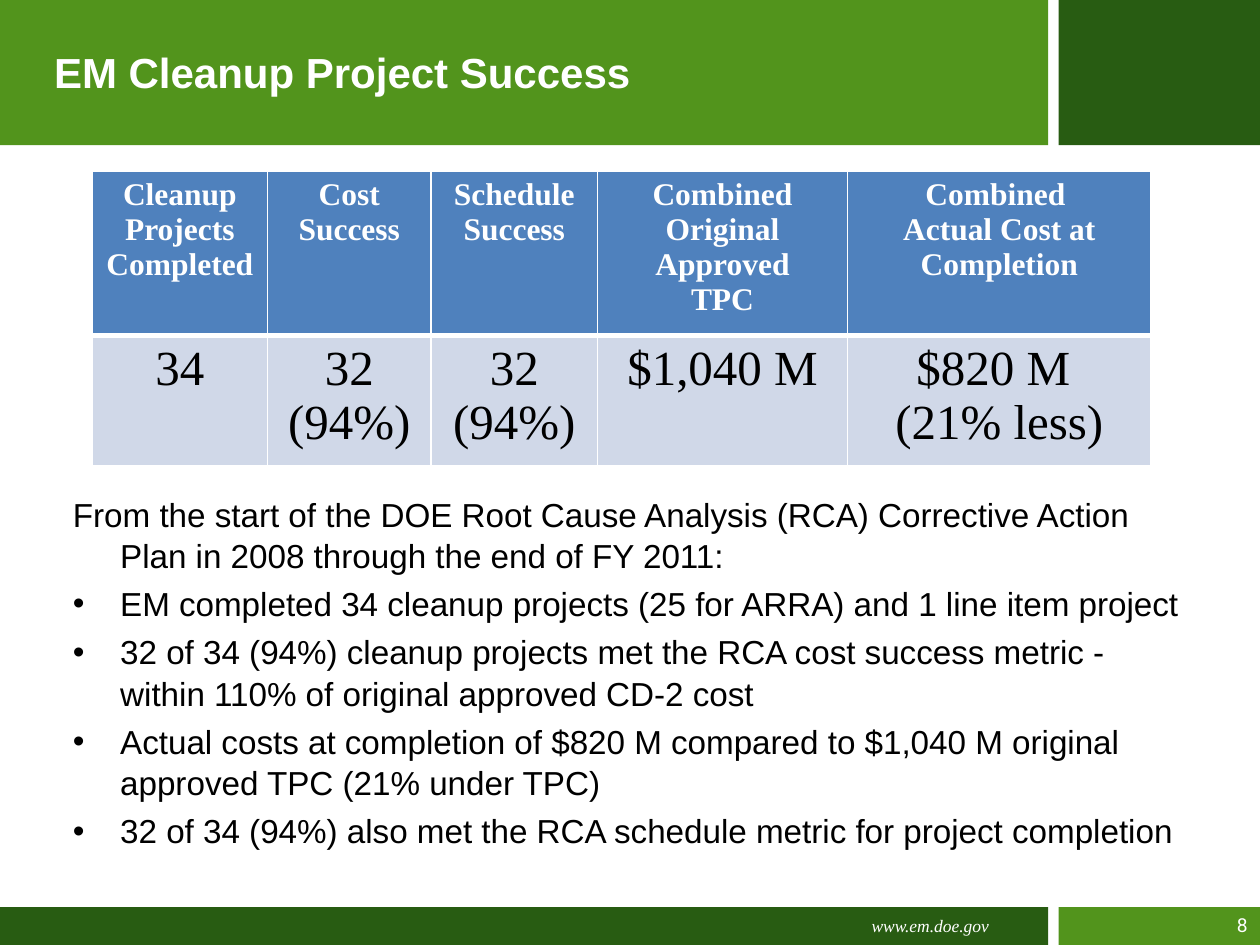
from lxml import etree
from pptx import Presentation
from pptx import util as u
from pptx.dml.color import RGBColor
from pptx.enum import shapes, text
from pptx.oxml import ns

Pt = u.Pt
LEFT, CENTER, RIGHT = text.PP_ALIGN.LEFT, text.PP_ALIGN.CENTER, text.PP_ALIGN.RIGHT

# Content
TITLE = "EM Cleanup Project Success"
WEB_ADDRESS = "www.em.doe.gov"
PAGE_NUMBER = "8"
HEADINGS = [
    ["Cleanup Projects", "Completed"],
    ["Cost Success"],
    ["Schedule Success"],
    ["Combined", "Original Approved", "TPC"],
    ["Combined ", "Actual Cost at Completion"],
]
RESULTS = [["34"], ["32 (94%)"], ["32 (94%)"], ["$1,040 M"], ["$820 M ", "(21% less)"]]
INTRO = ("From the start of the DOE Root Cause Analysis (RCA) Corrective Action "
         "Plan in 2008 through the end of FY 2011:")
BULLETS = [
    "EM completed 34 cleanup projects (25 for ARRA) and 1 line item project",
    "32 of 34 (94%) cleanup projects met the RCA cost success metric - "
    "within 110% of original approved CD-2 cost",
    "Actual costs at completion of $820 M compared to $1,040 M original "
    "approved TPC (21% under TPC)",
    "32 of 34 (94%) also met the RCA schedule metric for project completion",
]

THEME = {
    "light_green": "52941C", "dark_green": "285C12",
    "header_blue": "4F81BD", "row_blue": "D0D8E8",
    "white": "FFFFFF", "black": "000000",
    "sans": "Arial", "serif": "Times New Roman", "number": "Roboto",
    "title": 24, "heading": 18, "result": 28, "body": 19, "web": 10, "page": 11,
}

# Layout
WIDTH, HEIGHT = 720, 540
BAND_HEIGHT, FOOTER_HEIGHT = 83, 21.6
MAIN_WIDTH, SIDE_LEFT = 599, 605
TABLE_LEFT, TABLE_TOP = 52.8, 97.9
COLUMN_WIDTHS = [100, 93.6, 95, 143, 173.4]
ROW_HEIGHTS = [87, 68]
INDENT = 27


def color(name):
    return RGBColor.from_string(THEME[name])


def write(frame, lines, *, size, font, ink="white", bold=False, italic=False,
          align=LEFT, bullets=(), hanging=0, gap=0, spacing=None):
    """Fill a text frame; bullets holds the indexes of bulleted lines."""
    for index, line in enumerate(lines):
        paragraph = frame.paragraphs[0] if index == 0 else frame.add_paragraph()
        paragraph.alignment = align
        if index and gap:
            paragraph.space_before = Pt(gap)
        if spacing:
            paragraph.line_spacing = spacing
        properties = paragraph._p.get_or_add_pPr()
        if hanging:
            properties.set("marL", str(Pt(hanging)))
            properties.set("indent", str(-Pt(hanging)))
        if index in bullets:
            etree.SubElement(properties, ns.qn("a:buFont")).set("typeface", THEME["sans"])
            etree.SubElement(properties, ns.qn("a:buChar")).set("char", "•")
        run = paragraph.add_run()
        run.text = line
        run.font.size = Pt(THEME[size])
        run.font.name = THEME[font]
        run.font.color.rgb = color(ink)
        run.font.bold, run.font.italic = bold, italic


def add_text(slide, box, lines, anchor=text.MSO_ANCHOR.TOP, **style):
    frame = slide.shapes.add_textbox(*map(Pt, box)).text_frame
    frame.word_wrap = True
    frame.vertical_anchor = anchor
    write(frame, lines, **style)


def add_band(slide, left, top, width, height, fill):
    shape = slide.shapes.add_shape(
        shapes.MSO_SHAPE.RECTANGLE, Pt(left), Pt(top), Pt(width), Pt(height))
    shape.shadow.inherit = False
    shape.fill.solid()
    shape.fill.fore_color.rgb = color(fill)
    shape.line.fill.background()


def set_borders(cell, **widths):
    """Draw white borders; lines must come before the fill in the cell."""
    properties = cell._tc.get_or_add_tcPr()
    for position, side in enumerate(("L", "R", "T", "B")):
        line = etree.Element(ns.qn(f"a:ln{side}"), w=str(Pt(widths.get(side, 1))))
        fill = etree.SubElement(line, ns.qn("a:solidFill"))
        etree.SubElement(fill, ns.qn("a:srgbClr")).set("val", THEME["white"])
        properties.insert(position, line)


def add_results_table(slide):
    table = slide.shapes.add_table(
        2, len(COLUMN_WIDTHS), Pt(TABLE_LEFT), Pt(TABLE_TOP),
        Pt(sum(COLUMN_WIDTHS)), Pt(sum(ROW_HEIGHTS))).table
    for column, width in zip(table.columns, COLUMN_WIDTHS):
        column.width = Pt(width)
    rows = [
        (HEADINGS, "header_blue", {"B": 3}, dict(size="heading", bold=True)),
        (RESULTS, "row_blue", {"T": 3}, dict(size="result", ink="black")),
    ]
    for row, (entries, fill, borders, style) in enumerate(rows):
        table.rows[row].height = Pt(ROW_HEIGHTS[row])
        for column, lines in enumerate(entries):
            cell = table.cell(row, column)
            cell.fill.solid()
            cell.fill.fore_color.rgb = color(fill)
            set_borders(cell, **borders)
            write(cell.text_frame, lines, font="serif", align=CENTER, **style)


def main():
    presentation = Presentation()
    presentation.slide_width, presentation.slide_height = Pt(WIDTH), Pt(HEIGHT)
    slide = presentation.slides.add_slide(presentation.slide_layouts[6])

    # Header and footer bands, with the greens swapped between them
    for top, height, main_fill, side_fill in (
            (0, BAND_HEIGHT, "light_green", "dark_green"),
            (HEIGHT - FOOTER_HEIGHT, FOOTER_HEIGHT, "dark_green", "light_green")):
        add_band(slide, 0, top, MAIN_WIDTH, height, main_fill)
        add_band(slide, SIDE_LEFT, top, WIDTH - SIDE_LEFT, height, side_fill)

    # Footer text
    add_text(slide, (491, 519.3, 108, 18.7), [WEB_ADDRESS],
             size="web", font="serif", italic=True)
    add_text(slide, (617.8, 518.4, 102.2, 20.9), [PAGE_NUMBER],
             size="page", font="number", align=RIGHT)

    # Title, table and findings
    add_text(slide, (23.8, 0, 576, 82), [TITLE], anchor=text.MSO_ANCHOR.MIDDLE,
             size="title", font="sans", bold=True)
    add_results_table(slide)
    add_text(slide, (34.6, 278, 652.3, 213.8), [INTRO, *BULLETS],
             size="body", font="sans", ink="black", hanging=INDENT, gap=4.2,
             spacing=1.03, bullets=range(1, len(BULLETS) + 1))

    presentation.save("out.pptx")


if __name__ == "__main__":
    main()
